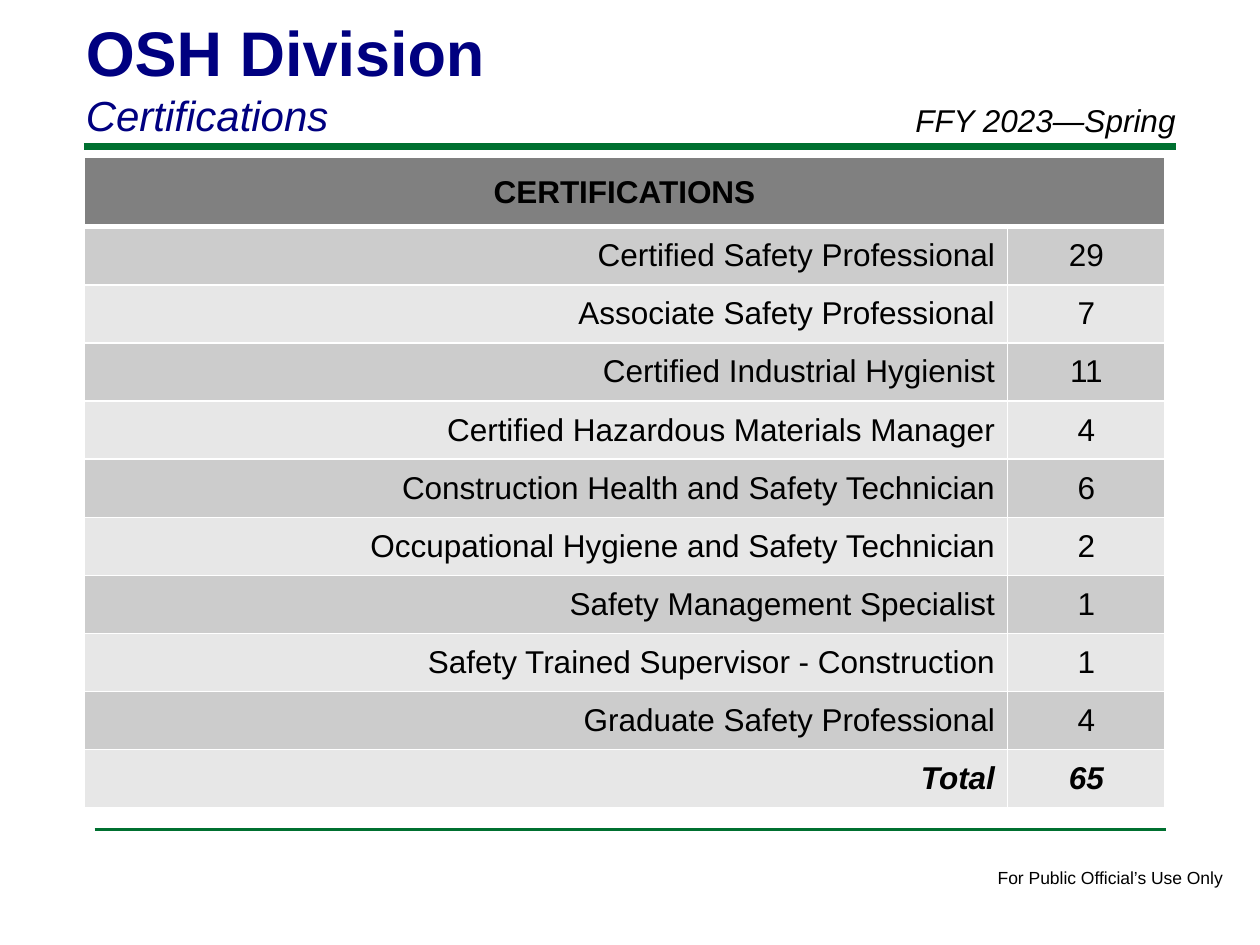
from lxml.etree import SubElement
from pptx import Presentation
from pptx.dml.color import RGBColor
from pptx.enum.shapes import MSO_CONNECTOR as Connector
from pptx.enum.text import MSO_ANCHOR as Anchor, MSO_AUTO_SIZE as AutoSize, PP_ALIGN as Align
from pptx.oxml.ns import qn
from pptx.util import Pt

FONT = "Arial"
GREEN = RGBColor(0x00, 0x70, 0x30)
NAVY = RGBColor(0x00, 0x00, 0x80)
BLACK = RGBColor(0x00, 0x00, 0x00)
WHITE = RGBColor(0xFF, 0xFF, 0xFF)
HEADER_GRAY = RGBColor(0x80, 0x80, 0x80)
BAND_GRAYS = (RGBColor(0xCC, 0xCC, 0xCC), RGBColor(0xE7, 0xE7, 0xE7))

CERTIFICATIONS = [
    ("Certified Safety Professional", 29),
    ("Associate Safety Professional", 7),
    ("Certified Industrial Hygienist", 11),
    ("Certified Hazardous Materials Manager", 4),
    ("Construction Health and Safety Technician", 6),
    ("Occupational Hygiene and Safety Technician", 2),
    ("Safety Management Specialist", 1),
    ("Safety Trained Supervisor - Construction", 1),
    ("Graduate Safety Professional", 4),
]
HEADER_HEIGHT, ROW_HEIGHT = 39.6, 33.2
COLUMN_WIDTHS = (527.8, 90)


def write(para, text, size=18, color=BLACK, bold=False, italic=False, align=Align.LEFT):
    para.alignment = align
    span = para.add_run()
    span.text = text
    font = span.font
    font.name, font.size, font.bold, font.italic = FONT, Pt(size), bold, italic
    font.color.rgb = color


def add_rule(page, left, right, top, weight):
    rule = page.shapes.add_connector(Connector.STRAIGHT, Pt(left), Pt(top), Pt(right), Pt(top))
    rule.line.color.rgb = GREEN
    rule.line.width = Pt(weight)
    SubElement(rule._element.spPr, qn("a:effectLst"))


def add_label(page, left, top, width, height, text, wrap=True, **style):
    box = page.shapes.add_textbox(Pt(left), Pt(top), Pt(width), Pt(height))
    box.text_frame.word_wrap = wrap
    write(box.text_frame.paragraphs[0], text, **style)


def fill_title(page, heading, subheading):
    title = page.shapes.title
    title.left, title.top, title.width, title.height = Pt(41.8), Pt(4.3), Pt(594), Pt(80)
    frame = title.text_frame
    frame.auto_size = AutoSize.NONE
    frame.vertical_anchor = Anchor.TOP
    write(frame.paragraphs[0], heading, size=36, color=NAVY, bold=True)
    write(frame.add_paragraph(), subheading, size=24, color=NAVY, italic=True)


def set_borders(cell, top=1, bottom=1):
    """Draw white borders; this must come before the cell's fill."""
    properties = cell._tc.get_or_add_tcPr()
    for side, weight in (("L", 1), ("R", 1), ("T", top), ("B", bottom)):
        line = SubElement(properties, qn(f"a:ln{side}"), w=str(Pt(weight)))
        SubElement(SubElement(line, qn("a:solidFill")), qn("a:srgbClr"), val=str(WHITE))


def format_cell(cell, fill, text="", top=1, bottom=1, **style):
    set_borders(cell, top, bottom)
    cell.fill.solid()
    cell.fill.fore_color.rgb = fill
    cell.vertical_anchor = Anchor.MIDDLE
    if text:
        write(cell.text_frame.paragraphs[0], text, **style)


def add_certification_table(page, left, top):
    total = sum(count for _, count in CERTIFICATIONS)
    records = CERTIFICATIONS + [("Total", total)]
    height = HEADER_HEIGHT + ROW_HEIGHT * len(records)
    table = page.shapes.add_table(len(records) + 1, 2, Pt(left), Pt(top),
                                  Pt(sum(COLUMN_WIDTHS)), Pt(height)).table
    for column, width in zip(table.columns, COLUMN_WIDTHS):
        column.width = Pt(width)
    for index, row in enumerate(table.rows):
        row.height = Pt(ROW_HEIGHT if index else HEADER_HEIGHT)

    header = table.cell(0, 0)
    header.merge(table.cell(0, 1))
    format_cell(header, HEADER_GRAY, "CERTIFICATIONS", bottom=3, bold=True, align=Align.CENTER)
    format_cell(table.cell(0, 1), HEADER_GRAY, bottom=3)

    for index, (name, count) in enumerate(records):
        is_total = index == len(records) - 1
        for column, (text, align) in enumerate(((name, Align.RIGHT), (str(count), Align.CENTER))):
            format_cell(table.cell(index + 1, column), BAND_GRAYS[index % 2], text,
                        top=1 if index else 3, bold=is_total, italic=is_total, align=align)


def main():
    deck = Presentation()
    deck.slide_width, deck.slide_height = Pt(720), Pt(540)
    page = deck.slides.add_slide(deck.slide_layouts[5])
    add_rule(page, 48, 672, 84, weight=4)
    add_rule(page, 54, 666, 474, weight=2)
    add_label(page, 563, 492, 145, 19.4, "For Public Official’s Use Only", wrap=False, size=10)
    fill_title(page, "OSH Division", "Certifications")
    add_certification_table(page, 48, 90)
    add_label(page, 516, 54, 180, 29, "FFY 2023—Spring", italic=True)
    deck.save("out.pptx")


if __name__ == "__main__":
    main()
